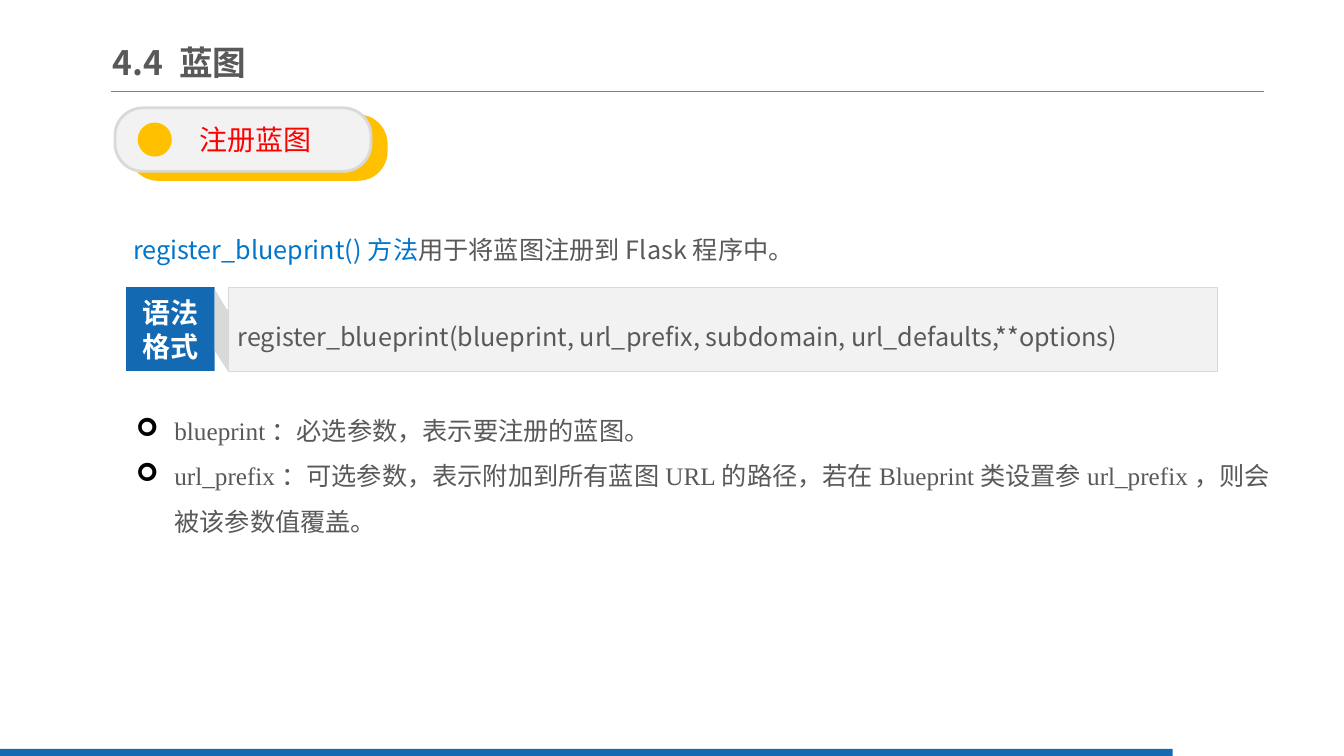
from lxml import etree
from pptx import Presentation
from pptx.dml.color import RGBColor
from pptx.enum import shapes, text
from pptx.oxml import ns
from pptx.util import Inches, Pt

COLORS = {
    "blue": "1369B2", "link": "0075CC", "amber": "FFC000", "red": "FF0000",
    "panel": "F2F2F2", "edge": "D9D9D9", "rule": "808080",
    "ink": "595959", "white": "FFFFFF", "black": "000000",
}
SANS, SERIF = "Noto Sans CJK SC", "Times New Roman"
SHAPE = shapes.MSO_SHAPE
LEFT, CENTER = text.PP_ALIGN.LEFT, text.PP_ALIGN.CENTER
MIDDLE, TOP = text.MSO_ANCHOR.MIDDLE, text.MSO_ANCHOR.TOP


def rgb(name):
    return RGBColor.from_string(COLORS[name])


def add_xml(parent, tag, **attributes):
    return etree.SubElement(parent, ns.qn(tag), **attributes)


class SlideBuilder:
    def __init__(self, slide):
        self.slide = slide

    def place(self, shape, box):
        shape.left, shape.top, shape.width, shape.height = map(Inches, box)

    def frame(self, shape, anchor, insets=(0.1, 0.05, 0.1, 0.05)):
        frame = shape.text_frame
        frame.word_wrap = True
        frame.auto_size = text.MSO_AUTO_SIZE.NONE
        frame.vertical_anchor = anchor
        (frame.margin_left, frame.margin_top,
         frame.margin_right, frame.margin_bottom) = map(Inches, insets)
        return frame

    def add_lines(self, frame, lines, size, color="ink", face=SANS, bold=False,
                  align=LEFT, spacing=1.0, bullet=None):
        """Fill a frame; each line is a list of (text, color) runs, None meaning the default."""
        for index, runs in enumerate(lines):
            paragraph = frame.paragraphs[0] if index == 0 else frame.add_paragraph()
            paragraph.alignment = align
            paragraph.line_spacing = spacing
            paragraph.space_before = Pt(0)
            if bullet:
                self.bullet(paragraph, bullet)
            font = paragraph.font
            font.size, font.bold, font.name = Pt(size), bold, face
            font.color.rgb = rgb(color)
            font._element.find(ns.qn("a:latin")).addnext(
                etree.Element(ns.qn("a:ea"), typeface=SANS))
            for words, run_color in runs:
                run = paragraph.add_run()
                run.text = words
                if run_color:
                    run.font.color.rgb = rgb(run_color)

    def bullet(self, paragraph, mark):
        paragraph.level = 1
        properties = paragraph._p.get_or_add_pPr()
        indent = Inches(0.38)
        properties.set("marL", str(indent))
        properties.set("indent", str(-indent))
        add_xml(add_xml(properties, "a:buClr"), "a:srgbClr", val=COLORS["black"])
        add_xml(properties, "a:buFont", typeface="Wingdings")
        add_xml(properties, "a:buChar", char=mark)

    def paint(self, shape, fill, line=None, weight=2):
        shape.shadow.inherit = False
        shape.fill.solid()
        shape.fill.fore_color.rgb = rgb(fill)
        if line:
            shape.line.color.rgb = rgb(line)
            shape.line.width = Pt(weight)
        else:
            shape.line.fill.background()

    def shape(self, kind, box, fill, line=None, weight=2):
        shape = self.slide.shapes.add_shape(kind, *map(Inches, box))
        self.paint(shape, fill, line, weight)
        return shape

    def pill(self, box, fill, line):
        pill = self.shape(SHAPE.ROUNDED_RECTANGLE, box, fill, line)
        pill.adjustments[0] = 0.44
        return pill

    def rule(self, left, right, y):
        rule = self.slide.shapes.add_connector(
            shapes.MSO_CONNECTOR.STRAIGHT, *map(Inches, (left, y, right, y)))
        rule.line.color.rgb = rgb("rule")
        rule.line.width = Pt(0.75)
        add_xml(rule._element.spPr, "a:effectLst")

    def polygon(self, points, fill):
        corners = [tuple(map(Inches, point)) for point in points]
        outline = self.slide.shapes.build_freeform(*corners[0])
        outline.add_line_segments(corners[1:], close=True)
        self.paint(outline.convert_to_shape(), fill)


def main():
    deck = Presentation()
    deck.slide_width, deck.slide_height = Inches(13.33), Inches(7.5)
    slide = deck.slides.add_slide(deck.slide_layouts[1])
    builder = SlideBuilder(slide)

    builder.rule(1.1, 12.54, 0.91)
    builder.shape(SHAPE.RECTANGLE, (0, 7.43, 11.63, 0.09), "blue")

    heading = slide.shapes.title
    builder.place(heading, (1.12, 0.34, 4.26, 0.55))
    builder.add_lines(builder.frame(heading, MIDDLE, (0, 0.07, 0, 0.07)),
                      [[("4.4 蓝图", None)]], 24, bold=True)

    builder.pill((1.29, 1.15, 2.54, 0.63), "amber", "amber")
    topic = builder.pill((1.14, 1.07, 2.54, 0.63), "panel", "edge")
    builder.add_lines(builder.frame(topic, MIDDLE, (0.34, 0.05, 0.1, 0.05)),
                      [[("注册蓝图", None)]], 20, "red", align=CENTER)
    builder.shape(SHAPE.OVAL, (1.38, 1.23, 0.31, 0.31), "amber", "amber")

    purpose = slide.shapes.add_textbox(*map(Inches, (1.19, 2.1, 11.46, 0.54)))
    builder.add_lines(builder.frame(purpose, TOP, (0.13, 0.07, 0.13, 0.07)),
                      [[("register_blueprint()方法", "link"),
                        ("用于将蓝图注册到Flask程序中。", None)]], 18, spacing=1.5)

    syntax = builder.shape(SHAPE.RECTANGLE, (2.26, 2.85, 9.81, 0.83),
                           "panel", "edge", 0.25)
    builder.add_lines(builder.frame(syntax, MIDDLE),
                      [[("register_blueprint(blueprint, url_prefix, subdomain, "
                         "url_defaults,**options)", None)]], 18, spacing=1.5)
    syntax_label = builder.shape(SHAPE.RECTANGLE, (1.25, 2.85, 0.88, 0.83), "blue")
    builder.add_lines(builder.frame(syntax_label, MIDDLE, (0, 0, 0, 0)),
                      [[("语法", None)], [("格式", None)]], 20, "white",
                      bold=True, align=CENTER)
    builder.polygon([(2.26, 3.07), (2.26, 3.68), (2.13, 3.48), (2.13, 2.87),
                     (2.25, 3.07)], "edge")

    parameters = slide.placeholders[1]
    builder.place(parameters, (1.25, 3.92, 11.5, 1.41))
    builder.add_lines(builder.frame(parameters, TOP), [
        [("blueprint：必选参数，表示要注册的蓝图。", None)],
        [("url_prefix：可选参数，表示附加到所有蓝图URL的路径，"
          "若在Blueprint类设置参url_prefix，则会被该参数值覆盖。", None)],
    ], 18, face=SERIF, spacing=1.5, bullet="➢")

    deck.save("out.pptx")


if __name__ == "__main__":
    main()
